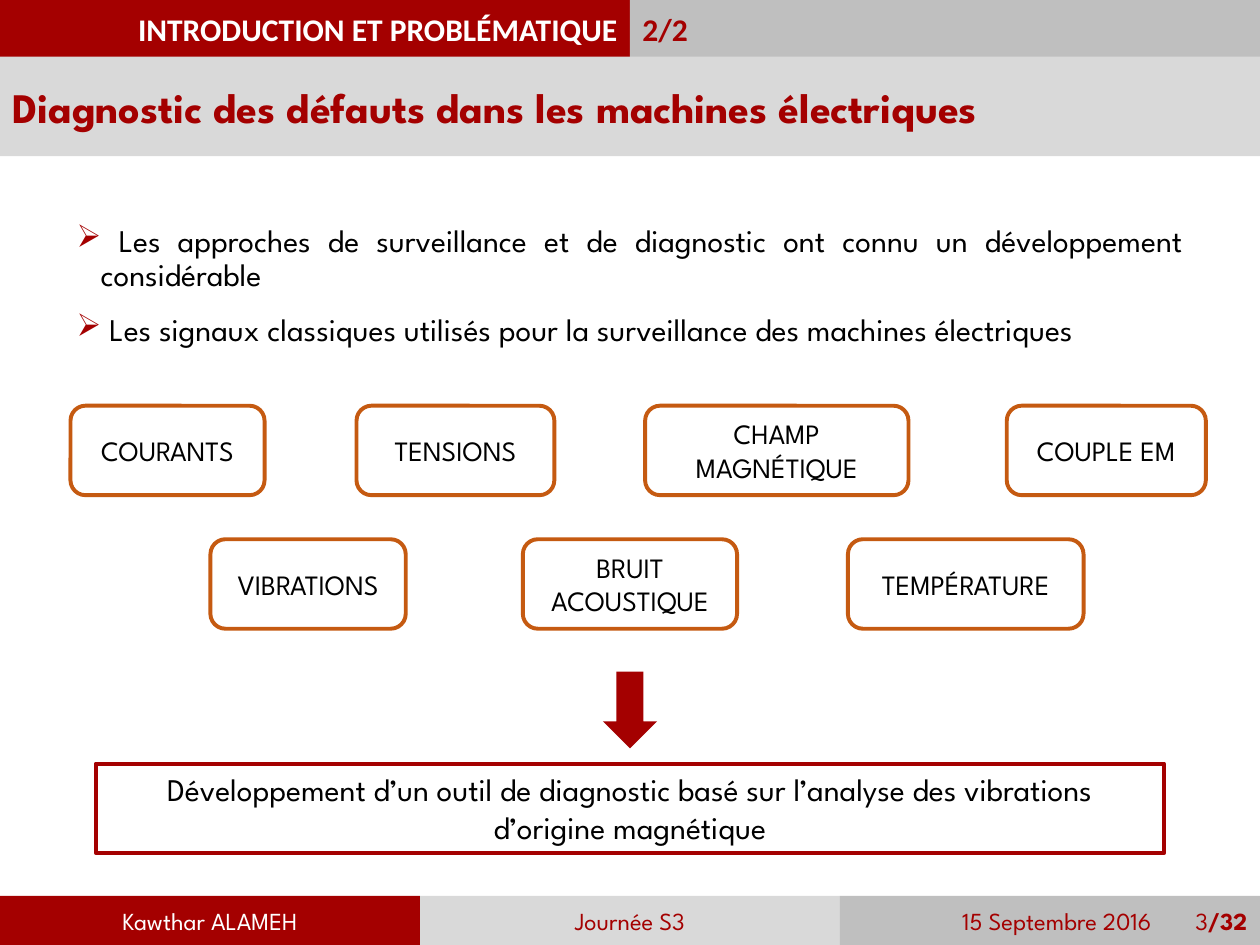
from lxml import etree
from pptx import Presentation
from pptx.dml.color import RGBColor
from pptx.enum.shapes import MSO_SHAPE
from pptx.enum.text import MSO_ANCHOR, MSO_AUTO_SIZE, PP_ALIGN
from pptx.oxml.ns import qn
from pptx.util import Inches, Pt

RED = RGBColor(0xA4, 0x00, 0x00)
ORANGE = RGBColor(0xC5, 0x5A, 0x11)
LIGHT_GREY = RGBColor(0xD9, 0xD9, 0xD9)
GREY = RGBColor(0xBF, 0xBF, 0xBF)
WHITE = RGBColor(0xFF, 0xFF, 0xFF)
BLACK = RGBColor(0x00, 0x00, 0x00)
BODY_FONT = "League Spartan"
HEADER_FONT = "Calibri"
RECTANGLE = MSO_SHAPE.RECTANGLE
ROUNDED = MSO_SHAPE.ROUNDED_RECTANGLE
DOWN_ARROW = MSO_SHAPE.DOWN_ARROW
LEFT, CENTER, RIGHT, JUSTIFY = PP_ALIGN.LEFT, PP_ALIGN.CENTER, PP_ALIGN.RIGHT, PP_ALIGN.JUSTIFY
MIDDLE, TOP = MSO_ANCHOR.MIDDLE, MSO_ANCHOR.TOP
GROW = MSO_AUTO_SIZE.SHAPE_TO_FIT_TEXT


def style_paragraph(paragraph, size, color, align, font=BODY_FONT, bold=False):
    """Set the alignment and font of a paragraph."""
    paragraph.alignment = align
    paragraph.font.size = Pt(size)
    paragraph.font.name = font
    paragraph.font.bold = bold
    paragraph.font.color.rgb = color


def add_box(slide, box, kind=RECTANGLE, fill=None, line=None):
    """Add a flat shape with an optional fill and outline."""
    shape = slide.shapes.add_shape(kind, *(Inches(length) for length in box))
    shape.shadow.inherit = False
    if fill is None:
        shape.fill.background()
    else:
        shape.fill.solid()
        shape.fill.fore_color.rgb = fill
    if line is None:
        shape.line.fill.background()
    else:
        shape.line.color.rgb = line
        shape.line.width = Pt(2.25)
    return shape


def add_label(shape, text, size, color, align=CENTER, font=BODY_FONT, bold=False):
    """Write one paragraph in a shape and return it."""
    paragraph = shape.text_frame.paragraphs[0]
    paragraph.text = text
    style_paragraph(paragraph, size, color, align, font, bold)
    return paragraph


def add_header(slide, box, section, progress):
    """Draw the section bar in two equal halves."""
    left, top, width, height = box
    half = width / 2
    section_box = add_box(slide, (left, top, half, height), fill=RED)
    add_label(section_box, section, 18, WHITE, RIGHT, HEADER_FONT, True)
    progress_box = add_box(slide, (left + half, top, half, height), fill=GREY)
    add_label(progress_box, progress, 18, RED, LEFT, HEADER_FONT, True)


def add_title(slide, box, text):
    """Draw the title band."""
    add_label(add_box(slide, box, fill=LIGHT_GREY), text, 24, RED, JUSTIFY, bold=True)


def add_footer(slide, box, author, event, date, page, total):
    """Draw the footer in three equal parts."""
    left, top, width, height = box
    third = width / 3
    author_box, event_box, date_box = [
        add_box(slide, (left + index * third, top, third, height), fill=fill)
        for index, fill in enumerate((RED, LIGHT_GREY, GREY))
    ]
    add_label(author_box, author, 14, WHITE)
    add_label(event_box, event, 14, RED)
    date_box.text_frame.margin_left = Inches(0.97)
    date_box.text_frame.margin_right = 0
    paragraph = add_label(date_box, f"{date}\t{page}", 14, RED, LEFT)
    total_run = paragraph.add_run()
    total_run.text = f"/{total}"
    total_run.font.bold = True
    tabs = etree.SubElement(paragraph._p.get_or_add_pPr(), qn("a:tabLst"))
    etree.SubElement(tabs, qn("a:tab"), pos=str(Inches(1.85)), algn="l")
    properties = paragraph._p.get_or_add_pPr()
    properties.insert(list(properties).index(properties.find(qn("a:defRPr"))), tabs)


def add_bullet(paragraph):
    """Give a paragraph a red arrow bullet with a hanging indent."""
    properties = paragraph._p.get_or_add_pPr()
    properties.set("marL", str(Inches(0.19)))
    properties.set("indent", str(-Inches(0.19)))
    defaults = properties.find(qn("a:defRPr"))
    color = etree.Element(qn("a:buClr"))
    etree.SubElement(color, qn("a:srgbClr"), val=str(RED))
    for element in (color, etree.Element(qn("a:buChar"), char="➢")):
        defaults.addprevious(element)


def add_bullets(slide, box, texts):
    """Write the bulleted statements."""
    frame = slide.shapes.add_textbox(*(Inches(length) for length in box)).text_frame
    frame.word_wrap = True
    frame.vertical_anchor = MIDDLE
    for index, text in enumerate(texts):
        paragraph = frame.add_paragraph() if index else frame.paragraphs[0]
        paragraph.text = f" {text}"
        style_paragraph(paragraph, 18, BLACK, JUSTIFY)
        paragraph.line_spacing = 0.9
        paragraph.space_before = paragraph.space_after = Pt(6)
        add_bullet(paragraph)


def add_signal_row(slide, top, height, signals):
    """Draw one row of rounded signal boxes."""
    for text, left, width in signals:
        shape = add_box(slide, (left, top, width, height), ROUNDED, line=ORANGE)
        add_label(shape, text, 16, BLACK)


def add_conclusion(slide, box, text):
    """Draw the arrow and the framed conclusion below it."""
    left, top, width, height = box
    arrow_width, arrow_height = 0.43, 0.61
    arrow_left = left + (width - arrow_width) / 2
    add_box(slide, (arrow_left, top, arrow_width, arrow_height), DOWN_ARROW, fill=RED)
    frame_height = 0.71
    shape = add_box(slide, (left, top + height - frame_height, width, frame_height), line=RED)
    shape.text_frame.vertical_anchor = TOP
    shape.text_frame.auto_size = GROW
    add_label(shape, text, 18, BLACK).space_before = Pt(12)


def main():
    """Build and save the slide."""
    presentation = Presentation()
    presentation.slide_width, presentation.slide_height = Inches(10), Inches(7.5)
    slide = presentation.slides.add_slide(presentation.slide_layouts[6])
    add_header(slide, (0, 0, 10, 0.46), "INTRODUCTION ET PROBLÉMATIQUE", "2/2")
    add_footer(slide, (0, 7.11, 10, 0.39), "Kawthar ALAMEH", "Journée S3",
               "15 Septembre 2016", 3, 32)
    add_title(slide, (0, 0.45, 10, 0.79),
              "Diagnostic des défauts dans les machines électriques")
    add_bullets(slide, (0.51, 1.49, 8.98, 1.57), (
        "Les approches de surveillance et de diagnostic ont connu un développement considérable",
        "Les signaux classiques utilisés pour la surveillance des machines électriques",
    ))
    add_signal_row(slide, 3.22, 0.71, (
        ("COURANTS", 0.56, 1.54), ("TENSIONS", 2.83, 1.57),
        ("CHAMP MAGNÉTIQUE", 5.12, 2.09), ("COUPLE EM", 7.99, 1.58),
    ))
    add_signal_row(slide, 4.28, 0.71, (
        ("VIBRATIONS", 1.67, 1.55), ("BRUIT ACOUSTIQUE", 4.15, 1.7),
        ("TEMPÉRATURE", 6.73, 1.87),
    ))
    add_conclusion(slide, (0.76, 5.33, 8.48, 1.44),
                   "Développement d’un outil de diagnostic basé sur l’analyse "
                   "des vibrations d’origine magnétique")
    presentation.save("out.pptx")


if __name__ == "__main__":
    main()
